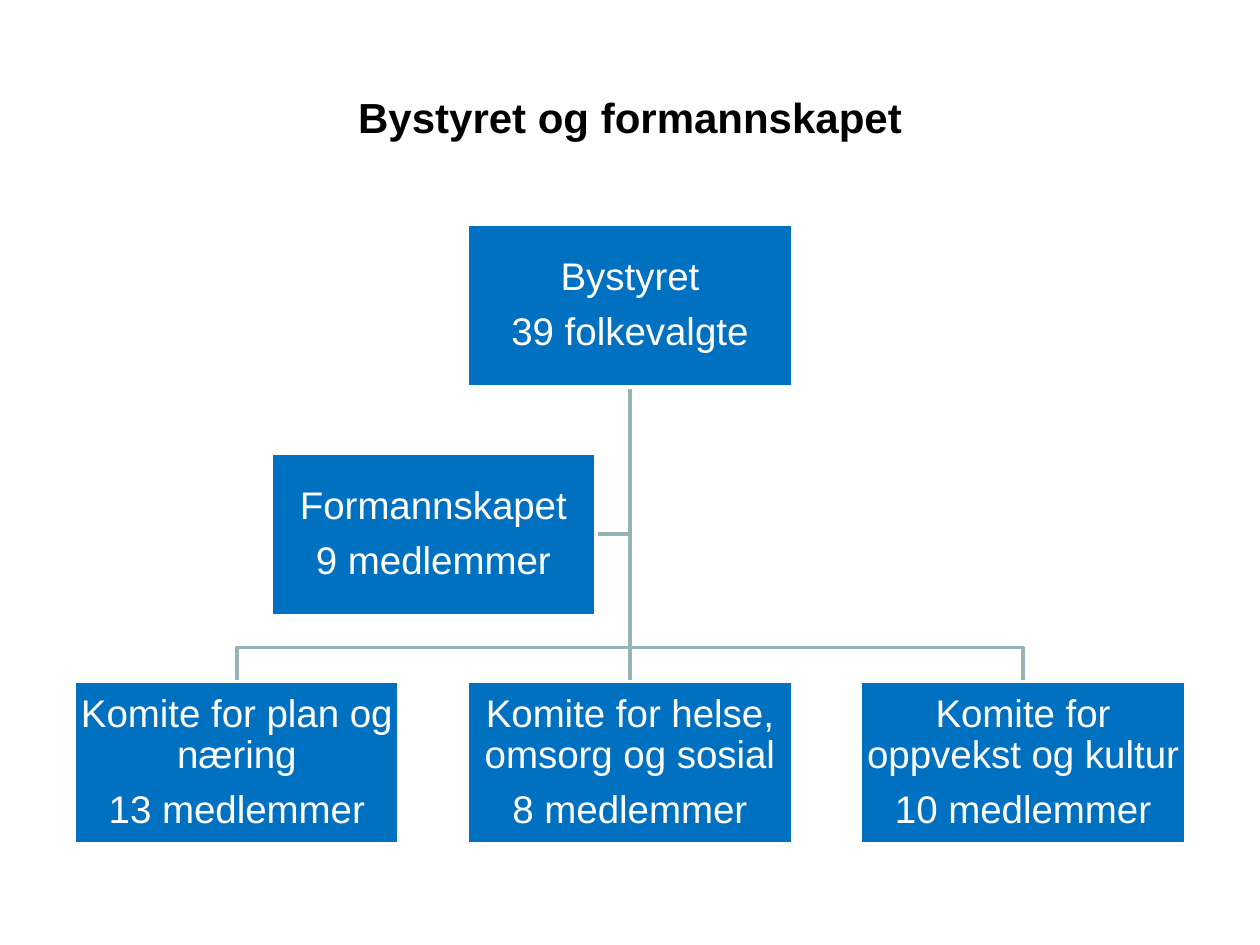
from lxml import etree
from pptx import Presentation
from pptx import util as u
from pptx.dml.color import RGBColor
from pptx.enum import shapes, text
from pptx.oxml.ns import qn

COLOURS = {"title": "000000", "box": "0070C0", "paper": "FFFFFF", "link": "96B3B6"}
FONT = "Arial"
BOX_WIDTH, BOX_HEIGHT = u.Cm(6.55), u.Cm(3.28)

COUNCIL = ("Bystyret", "39 folkevalgte")
BOARD = ("Formannskapet", "9 medlemmer")
COMMITTEES = [
    ("Komite for plan og næring", "13 medlemmer"),
    ("Komite for helse, omsorg og sosial", "8 medlemmer"),
    ("Komite for oppvekst og kultur", "10 medlemmer"),
]


def colour(name):
    return RGBColor.from_string(COLOURS[name])


def style_line(line, name):
    line.color.rgb = colour(name)
    line.width = u.Pt(2)


def style_font(font, size, name, bold=False):
    font.name = FONT
    font.size = u.Pt(size)
    font.bold = bold
    font.color.rgb = colour(name)


def add_title(page, wording, left, top, width, height):
    title = page.shapes.title
    title.left, title.top, title.width, title.height = left, top, width, height
    frame = title.text_frame
    frame.text = wording
    frame.vertical_anchor = text.MSO_ANCHOR.MIDDLE
    para = frame.paragraphs[0]
    para.alignment = text.PP_ALIGN.CENTER
    style_font(para.font, 24, "title", bold=True)


def add_box(page, lines, left, top):
    box = page.shapes.add_shape(
        shapes.MSO_SHAPE.RECTANGLE, left, top, BOX_WIDTH, BOX_HEIGHT)
    box.shadow.inherit = False
    box.fill.solid()
    box.fill.fore_color.rgb = colour("box")
    style_line(box.line, "paper")
    frame = box.text_frame
    frame.word_wrap = True
    frame.vertical_anchor = text.MSO_ANCHOR.MIDDLE
    frame.margin_left = frame.margin_right = u.Cm(0.05)
    frame.margin_top = frame.margin_bottom = u.Cm(0.05)
    frame.text = "\n".join(lines)
    for para in frame.paragraphs:
        para.alignment = text.PP_ALIGN.CENTER
        para.line_spacing = 0.9
        para.space_after = u.Pt(7.7)
        style_font(para.font, 22, "paper")
    return box


def add_bent_line(page, points):
    builder = page.shapes.build_freeform(*points[0], scale=1.0)
    builder.add_line_segments(points[1:], close=False)
    line = builder.convert_to_shape()
    line.shadow.inherit = False
    line.fill.background()
    style_line(line.line, "link")


def add_trunk(page, x, top, bottom):
    trunk = page.shapes.add_connector(shapes.MSO_CONNECTOR.STRAIGHT, x, top, x, bottom)
    style_line(trunk.line, "link")
    etree.SubElement(trunk._element.spPr, qn("a:effectLst"))
    return trunk


def add_organisation(page, left, top, width, height):
    middle = left + width // 2
    council_left = middle - BOX_WIDTH // 2
    council_bottom = top + BOX_HEIGHT
    pitch = (width - BOX_WIDTH) // (len(COMMITTEES) - 1)
    committee_top = top + height - BOX_HEIGHT
    branch_y = committee_top - u.Cm(0.69)
    board_left = council_left - pitch // 2
    board_top = (council_bottom + committee_top - BOX_HEIGHT) // 2

    start = (middle, council_bottom)
    board_y = board_top + BOX_HEIGHT // 2
    add_bent_line(page, [start, (middle, board_y), (board_left + BOX_WIDTH, board_y)])
    for x in (middle - pitch, middle + pitch):
        add_bent_line(page, [start, (middle, branch_y), (x, branch_y), (x, committee_top)])
    trunk = add_trunk(page, middle, council_bottom, committee_top)

    council = add_box(page, COUNCIL, council_left, top)
    committees = [add_box(page, lines, left + index * pitch, committee_top)
                  for index, lines in enumerate(COMMITTEES)]
    add_box(page, BOARD, board_left, board_top)
    trunk.begin_connect(council, 2)
    trunk.end_connect(committees[1], 0)


def main():
    deck = Presentation()
    deck.slide_width, deck.slide_height = u.Cm(25.4), u.Cm(19.05)
    page = deck.slides.add_slide(deck.slide_layouts[5])
    page.background.fill.solid()
    page.background.fill.fore_color.rgb = colour("paper")
    add_title(page, "Bystyret og formannskapet",
              u.Cm(1.27), u.Cm(0.76), u.Cm(22.86), u.Cm(3.18))
    add_organisation(page, u.Cm(1.5), u.Cm(4.52), u.Cm(22.4), u.Cm(12.5))
    deck.save("out.pptx")


if __name__ == "__main__":
    main()
